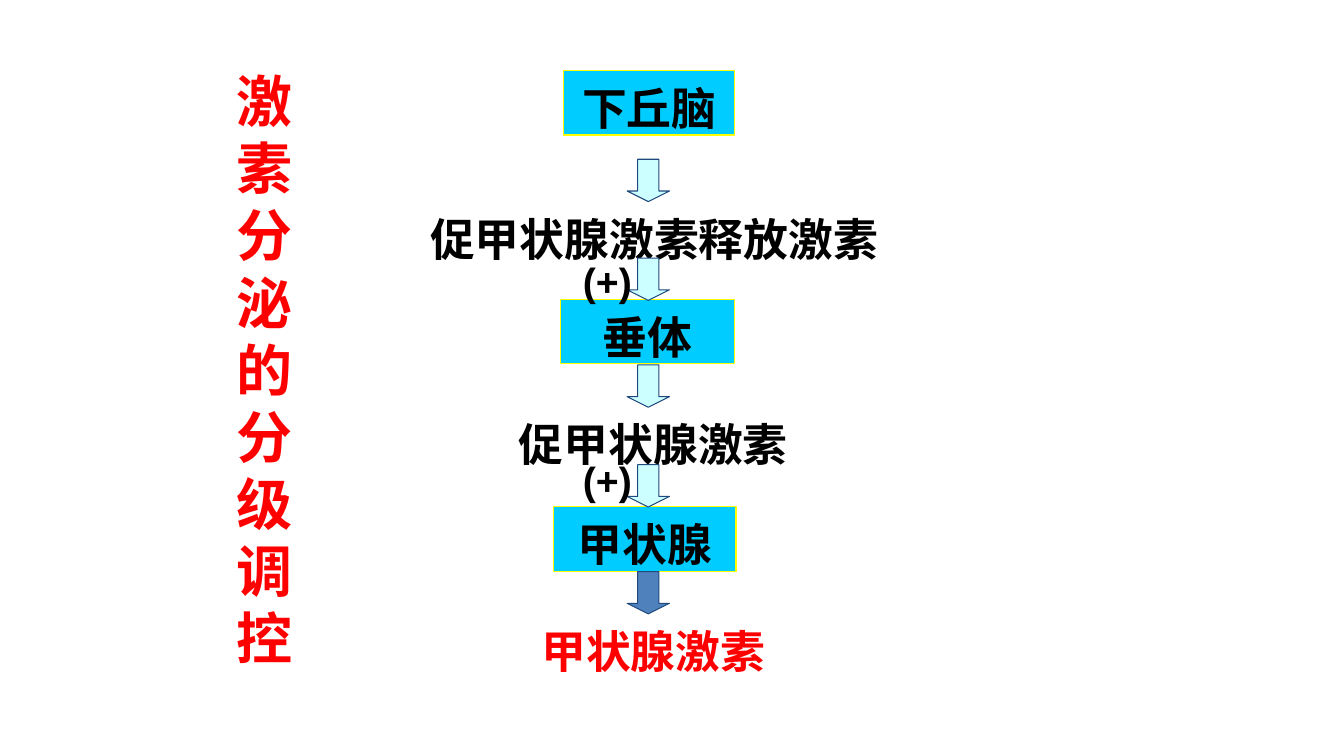
import pptx
import pptx.dml.color
import pptx.enum.shapes
import pptx.enum.text
import pptx.oxml
import pptx.oxml.ns
import pptx.util

CJK_FONT = "Noto Sans CJK SC"
BLACK, RED, CYAN, YELLOW = "000000", "FF0000", "00CCFF", "FFFF00"
PALE, BLUE, NAVY = "CCFFFF", "4F81BD", "1F497D"


def color(value):
    return pptx.dml.color.RGBColor.from_string(value)


class FlowSlide:
    cell = 0.1
    line_height = 1.2
    line_width = 0.75

    def __init__(self, presentation):
        self.slide = presentation.slides.add_slide(presentation.slide_layouts[6])

    def grid(self, *cells):
        return [pptx.util.Inches(count * self.cell) for count in cells]

    def add_text(self, shape, paragraphs, size, ink, font=CJK_FONT, top=1):
        frame = shape.text_frame
        frame.word_wrap = True
        frame.auto_size = pptx.enum.text.MSO_AUTO_SIZE.NONE
        frame.vertical_anchor = pptx.enum.text.MSO_ANCHOR.TOP
        frame.margin_top, frame.margin_bottom = self.grid(top, 0)
        for index, text in enumerate(paragraphs):
            paragraph = frame.add_paragraph() if index else frame.paragraphs[0]
            paragraph.alignment = pptx.enum.text.PP_ALIGN.CENTER
            paragraph.line_spacing = pptx.util.Pt(size * self.line_height)
            run = paragraph.add_run()
            run.text = text
            run.font.size = pptx.util.Pt(size)
            run.font.bold = True
            run.font.name = font
            run.font.color.rgb = color(ink)
            east_asian = pptx.oxml.parse_xml(
                f'<a:ea {pptx.oxml.ns.nsdecls("a")} typeface="{font}"/>')
            run.font._element.append(east_asian)

    def shape(self, kind, place, fill, line):
        shape = self.slide.shapes.add_shape(kind, *self.grid(*place))
        shape.shadow.inherit = False
        shape.fill.solid()
        shape.fill.fore_color.rgb = color(fill)
        shape.line.color.rgb = color(line)
        shape.line.width = pptx.util.Pt(self.line_width)
        return shape

    def gland(self, text, left, top, width):
        box = self.shape(pptx.enum.shapes.MSO_SHAPE.RECTANGLE,
                         (left, top, width, 6.4), CYAN, YELLOW)
        self.add_text(box, [text], 32, BLACK)

    def label(self, paragraphs, place, size=32, ink=BLACK, **style):
        box = self.slide.shapes.add_textbox(*self.grid(*place))
        self.add_text(box, paragraphs, size, ink, **style)

    def arrow(self, top, fill=PALE):
        arrow = self.shape(pptx.enum.shapes.MSO_SHAPE.DOWN_ARROW,
                           (62.2, top, 4.2, 4.2), fill, NAVY)
        arrow.adjustments[0] = 0.5
        arrow.adjustments[1] = 0.25


def main():
    presentation = pptx.Presentation()
    presentation.slide_width = pptx.util.Inches(13.33)
    presentation.slide_height = pptx.util.Inches(7.5)
    flow = FlowSlide(presentation)

    flow.label(["激素分泌的分级调", "控"], (22.5, 5.6, 7.5, 67.7), 40, RED)
    for text, left, top, width in (("下丘脑", 55.9, 7, 17),
                                   ("垂体", 55.6, 29.7, 17.3),
                                   ("甲状腺", 54.9, 50.3, 18.1)):
        flow.gland(text, left, top, width)
    for text, left, top, width, ink in (
            ("促甲状腺激素释放激素", 39.5, 20, 50.8, BLACK),
            ("促甲状腺激素", 41.9, 40.3, 45.8, BLACK),
            ("甲状腺激素", 41.9, 60.9, 45.8, RED)):
        flow.label([text], (left, top, width, 6.3), ink=ink)
    for top in (15.8, 25.6, 36.2, 46.1):
        flow.arrow(top)
    flow.arrow(56.7, BLUE)
    for top in (24.8, 44.6):
        flow.label(["(+)"], (56.1, top, 8.3, 5.7), 28, font="Arial", top=0.7)

    presentation.save("out.pptx")


if __name__ == "__main__":
    main()
